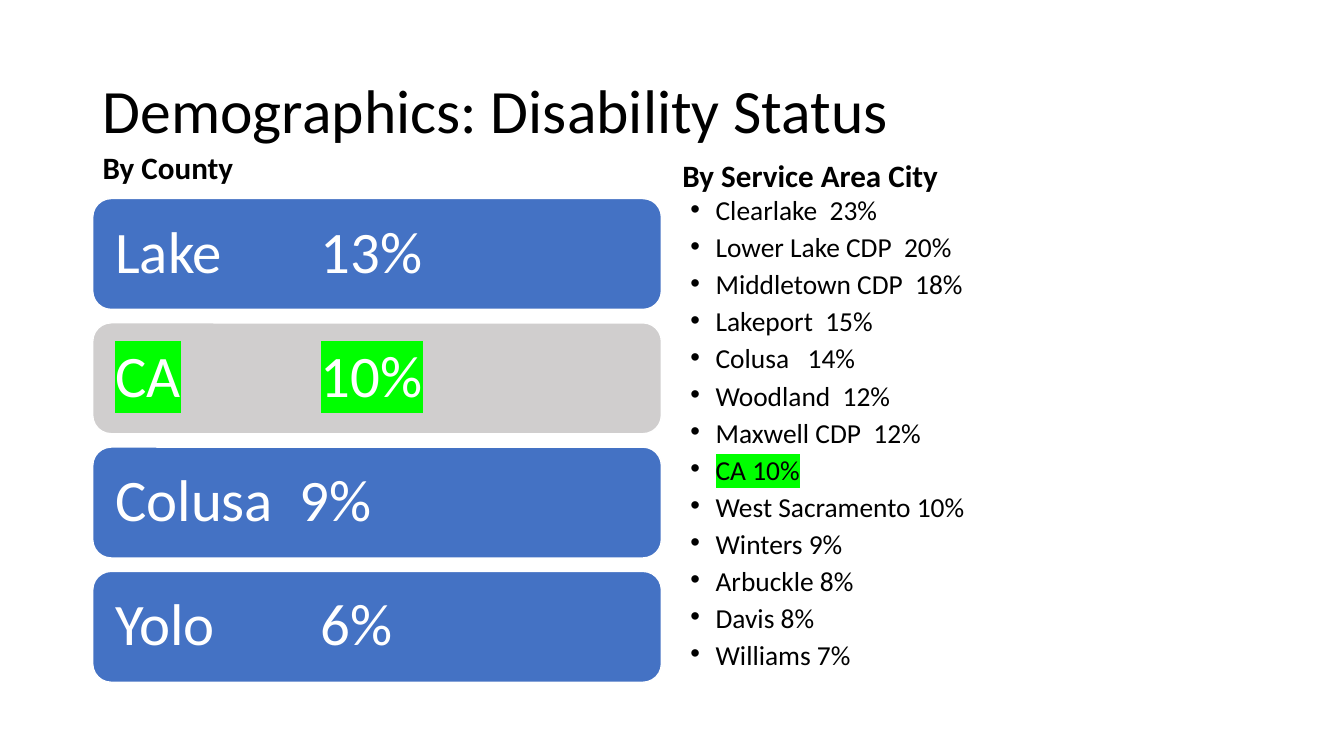
"""Build the disability status slide."""
import pptx
import pptx.dml.color
import pptx.enum.shapes
import pptx.enum.text
import pptx.oxml.ns
import pptx.util
from lxml import etree

Inches, Pt = pptx.util.Inches, pptx.util.Pt
RGB = pptx.dml.color.RGBColor
Anchor = pptx.enum.text.MSO_ANCHOR
qn = pptx.oxml.ns.qn

BLACK = RGB(0, 0, 0)
WHITE = RGB(0xFF, 0xFF, 0xFF)
BLUE = RGB(0x44, 0x72, 0xC4)
GREY = RGB(0xD0, 0xCE, 0xCE)
GREEN = RGB(0, 0xFF, 0)

LEFT, WIDE = 0.92, 5.64
TOP, PITCH, HIGH = 1.97, 1.233, 1.1
COUNTIES = ["Lake\t13%", "CA\t10%", "Colusa  9%", "Yolo\t6%"]
CITIES = [
    "Clearlake  23%", "Lower Lake CDP  20%", "Middletown CDP  18%",
    "Lakeport  15%", "Colusa   14%", "Woodland  12%", "Maxwell CDP  12%",
    "CA 10%", "West Sacramento 10%", "Winters 9%", "Arbuckle 8%",
    "Davis 8%", "Williams 7%",
]
HEADS = [("By County", LEFT, 0.38), ("By Service Area City", 6.67, 0.46)]


def style(para, size, color, space, bold=False):
    para.alignment = pptx.enum.text.PP_ALIGN.LEFT
    para.line_spacing = space
    for run in para.runs:
        run.font.name = "Calibri"
        run.font.size = Pt(size)
        run.font.bold = bold
        run.font.color.rgb = color


def mark(para):
    for run in para.runs:
        light = etree.Element(qn("a:highlight"))
        etree.SubElement(light, qn("a:srgbClr"), val=str(GREEN))
        run.font._element.find(qn("a:solidFill")).addnext(light)


deck = pptx.Presentation()
deck.slide_width, deck.slide_height = Inches(13.33), Inches(7.5)
slide = deck.slides.add_slide(deck.slide_layouts[5])
shapes = slide.shapes

title = shapes.title
title.left, title.top = Inches(LEFT), Inches(0.4)
title.width, title.height = Inches(11.5), Inches(1.45)
title.text_frame.text = "Demographics: Disability Status"
title.text_frame.vertical_anchor = Anchor.MIDDLE
style(title.text_frame.paragraphs[0], 44, BLACK, 0.9)

for text, left, high in HEADS:
    box = shapes.add_textbox(Inches(left), Inches(1.5), Inches(WIDE), Inches(high))
    frame = box.text_frame
    frame.word_wrap = True
    frame.vertical_anchor = Anchor.BOTTOM
    frame.text = text
    style(frame.paragraphs[0], 22.2, BLACK, 0.7, bold=True)

for row, text in enumerate(COUNTIES):
    state = text.startswith("CA")
    bar = shapes.add_shape(
        pptx.enum.shapes.MSO_SHAPE.ROUNDED_RECTANGLE,
        Inches(LEFT), Inches(TOP + row * PITCH), Inches(WIDE), Inches(HIGH))
    bar.shadow.inherit = False
    bar.fill.solid()
    bar.fill.fore_color.rgb = GREY if state else BLUE
    bar.line.color.rgb = WHITE
    bar.line.width = Pt(1)
    frame = bar.text_frame
    frame.word_wrap = True
    frame.vertical_anchor = Anchor.MIDDLE
    frame.margin_left = frame.margin_right = Inches(0.17)
    frame.text = text
    para = frame.paragraphs[0]
    style(para, 42, WHITE, 0.9)
    tabs = etree.SubElement(para._p.get_or_add_pPr(), qn("a:tabLst"))
    etree.SubElement(tabs, qn("a:tab"), pos=str(Inches(2.04)), algn="l")
    if state:
        mark(para)

box = shapes.add_textbox(Inches(6.75), Inches(1.96), Inches(5.67), Inches(4.8))
frame = box.text_frame
frame.word_wrap = True
frame.text = "\n".join(CITIES)
for para in frame.paragraphs:
    style(para, 19.6, BLACK, 0.7)
    para.space_before = Pt(10)
    props = para._p.get_or_add_pPr()
    props.set("marL", str(Inches(0.25)))
    props.set("indent", str(-Inches(0.25)))
    etree.SubElement(props, qn("a:buFont"), typeface="Arial")
    etree.SubElement(props, qn("a:buChar"), char="•")
    if para.text.startswith("CA"):
        mark(para)

deck.save("out.pptx")
